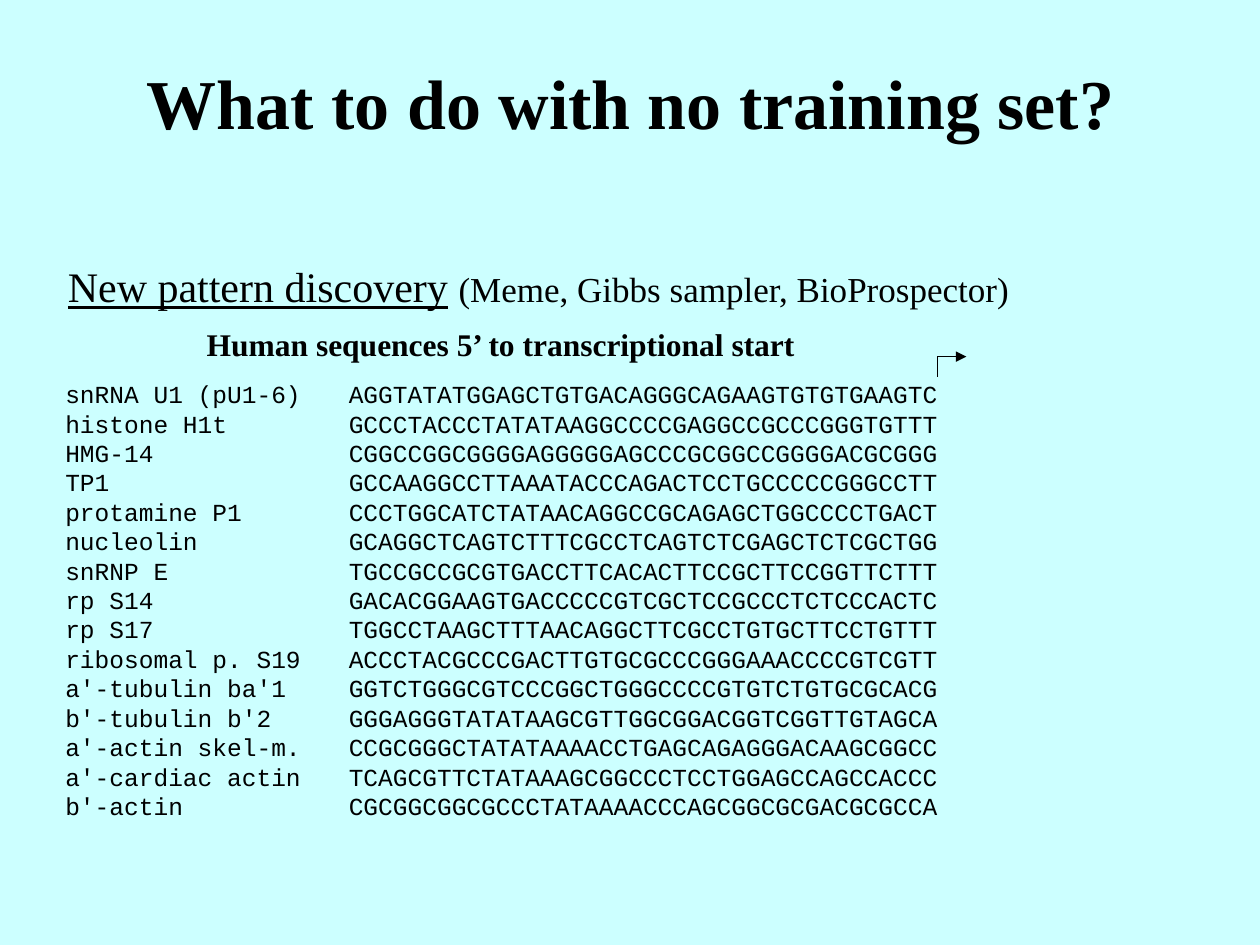
from lxml.etree import SubElement
from pptx import Presentation
from pptx.dml.color import RGBColor
from pptx.enum.shapes import MSO_CONNECTOR
from pptx.enum.text import MSO_AUTO_SIZE as AutoSize, PP_ALIGN as Align
from pptx.oxml.ns import qn
from pptx.util import Inches, Pt

BACKGROUND = RGBColor(0xCC, 0xFF, 0xFF)
BLACK = RGBColor(0, 0, 0)
SERIF = "Times New Roman"
MONO = "Courier New"

SEQUENCES = [
    ("snRNA U1 (pU1-6)", "AGGTATATGGAGCTGTGACAGGGCAGAAGTGTGTGAAGTC"),
    ("histone H1t", "GCCCTACCCTATATAAGGCCCCGAGGCCGCCCGGGTGTTT"),
    ("HMG-14", "CGGCCGGCGGGGAGGGGGAGCCCGCGGCCGGGGACGCGGG"),
    ("TP1", "GCCAAGGCCTTAAATACCCAGACTCCTGCCCCCGGGCCTT"),
    ("protamine P1", "CCCTGGCATCTATAACAGGCCGCAGAGCTGGCCCCTGACT"),
    ("nucleolin", "GCAGGCTCAGTCTTTCGCCTCAGTCTCGAGCTCTCGCTGG"),
    ("snRNP E", "TGCCGCCGCGTGACCTTCACACTTCCGCTTCCGGTTCTTT"),
    ("rp S14", "GACACGGAAGTGACCCCCGTCGCTCCGCCCTCTCCCACTC"),
    ("rp S17", "TGGCCTAAGCTTTAACAGGCTTCGCCTGTGCTTCCTGTTT"),
    ("ribosomal p. S19", "ACCCTACGCCCGACTTGTGCGCCCGGGAAACCCCGTCGTT"),
    ("a'-tubulin ba'1", "GGTCTGGGCGTCCCGGCTGGGCCCCGTGTCTGTGCGCACG"),
    ("b'-tubulin b'2", "GGGAGGGTATATAAGCGTTGGCGGACGGTCGGTTGTAGCA"),
    ("a'-actin skel-m.", "CCGCGGGCTATATAAAACCTGAGCAGAGGGACAAGCGGCC"),
    ("a'-cardiac actin", "TCAGCGTTCTATAAAGCGGCCCTCCTGGAGCCAGCCACCC"),
    ("b'-actin", "CGCGGCGGCGCCCTATAAAACCCAGCGGCGCGACGCGCCA"),
]


def add_text_frame(slide, box):
    """Add a wrapping text box and return its text frame."""
    frame = slide.shapes.add_textbox(*map(Inches, box)).text_frame
    frame.word_wrap = True
    frame.auto_size = AutoSize.SHAPE_TO_FIT_TEXT
    return frame


def add_run(paragraph, text, size, font=SERIF, bold=False, underline=False):
    """Add formatted text to a paragraph."""
    run = paragraph.add_run()
    run.text = text
    run.font.name = font
    run.font.size = Pt(size)
    run.font.bold = bold
    run.font.underline = underline
    run.font.color.rgb = BLACK


def set_relative_space_before(paragraph, percent):
    """Set the space before a paragraph as a share of its line height."""
    space = SubElement(paragraph._p.get_or_add_pPr(), qn("a:spcBef"))
    SubElement(space, qn("a:spcPct"), val=str(percent * 1000))


def set_tab_stop(paragraph, position):
    """Give a paragraph one left tab stop."""
    tabs = SubElement(paragraph._p.get_or_add_pPr(), qn("a:tabLst"))
    SubElement(tabs, qn("a:tab"), pos=str(Inches(position)), algn="l")


def add_heading(slide, box, runs, align=Align.LEFT):
    """Place a one-line heading made of (text, format) runs."""
    paragraph = add_text_frame(slide, box).paragraphs[0]
    paragraph.alignment = align
    set_relative_space_before(paragraph, 50)
    for text, style in runs:
        add_run(paragraph, text, **style)


def add_sequences(slide, box):
    """Place the gene names and their sequences in two tabbed columns."""
    frame = add_text_frame(slide, box)
    for index, row in enumerate(SEQUENCES):
        paragraph = frame.add_paragraph() if index else frame.paragraphs[0]
        set_tab_stop(paragraph, 2.25)
        add_run(paragraph, "\t".join(row), size=14, font=MONO)


def add_line(slide, start, end, arrow=False):
    """Draw a thin black line, with an arrowhead at its end if asked."""
    line = slide.shapes.add_connector(
        MSO_CONNECTOR.STRAIGHT, *map(Inches, (*start, *end)))
    line.line.color.rgb = BLACK
    line.line.width = Pt(0.75)
    if arrow:
        SubElement(line.line._get_or_add_ln(), qn("a:tailEnd"), type="triangle")
    SubElement(line._element.spPr, qn("a:effectLst"))


def add_start_marker(slide, box):
    """Draw the bent arrow marking the transcriptional start."""
    left, top, width, height = box
    add_line(slide, (left, top + height), (left, top))
    add_line(slide, (left, top), (left + width, top), arrow=True)


def main():
    """Build and save the slide."""
    presentation = Presentation()
    presentation.slide_width = Inches(10)
    presentation.slide_height = Inches(7.5)
    slide = presentation.slides.add_slide(presentation.slide_layouts[6])
    slide.background.fill.solid()
    slide.background.fill.fore_color.rgb = BACKGROUND

    add_heading(slide, (0.44, 2.02, 7.94, 0.5), [
        ("New pattern discovery", {"size": 24, "underline": True}),
        (" ", {"size": 24}),
        ("(Meme, Gibbs sampler, BioProspector)", {"size": 20}),
    ])
    add_sequences(slide, (0.42, 2.96, 8.06, 3.59))
    add_heading(slide, (0.55, 2.53, 6.85, 0.4), [
        ("Human sequences 5’ to transcriptional start", {"size": 18, "bold": True}),
    ], Align.CENTER)
    add_start_marker(slide, (7.44, 2.83, 0.23, 0.16))
    add_heading(slide, (0.92, 0.42, 8.17, 0.77), [
        ("What to do with no training set?", {"size": 40, "bold": True}),
    ], Align.CENTER)
    presentation.save("out.pptx")


if __name__ == "__main__":
    main()
